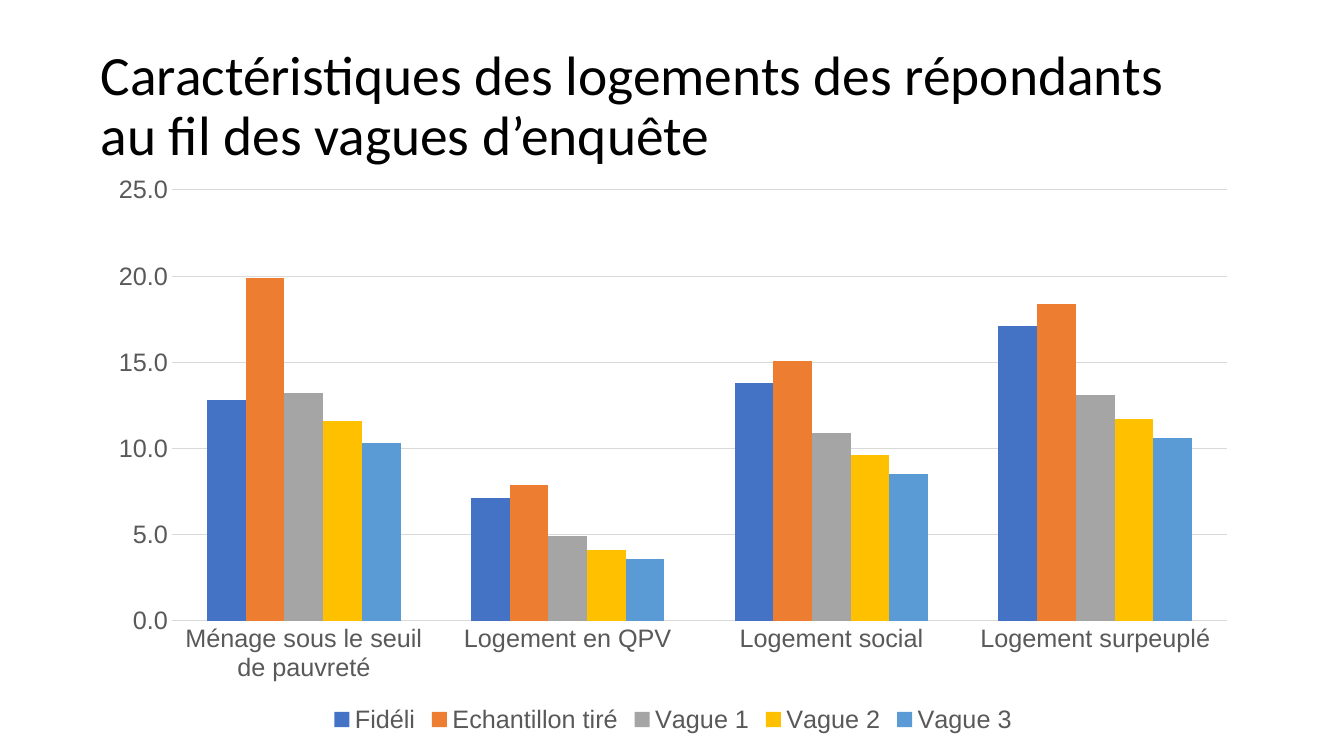
from pptx import Presentation
from pptx.chart.data import CategoryChartData
from pptx.dml.color import RGBColor
from pptx.enum import chart as charts, text
from pptx.util import Inches, Pt

TITLE_LINES = ["Caractéristiques des logements des répondants", "au fil des vagues d’enquête"]
CATEGORIES = ["Ménage sous le seuil de pauvreté", "Logement en QPV",
              "Logement social", "Logement surpeuplé"]
SERIES = [
    ("Fidéli", "4472C4", (12.8, 7.1, 13.8, 17.1)),
    ("Echantillon tiré", "ED7D31", (19.9, 7.9, 15.1, 18.4)),
    ("Vague 1", "A5A5A5", (13.2, 4.9, 10.9, 13.1)),
    ("Vague 2", "FFC000", (11.6, 4.1, 9.6, 11.7)),
    ("Vague 3", "5B9BD5", (10.3, 3.6, 8.5, 10.6)),
]
TITLE_BOX = (0.9, 0.26, 11.5, 1.61)
CHART_BOX = (0.95, 1.63, 11.45, 5.7)
TITLE_FONT = {"name": "Calibri", "size": Pt(39.6), "color": "000000"}
CHART_FONT = {"name": "Arial", "size": Pt(18), "color": "595959"}
GRID_COLOR = "D9D9D9"


def rgb(value):
    return RGBColor.from_string(value)


def set_all(target, values):
    for name, value in values.items():
        setattr(target, name, value)


def format_font(font, values):
    for name, value in values.items():
        if name == "color":
            font.color.rgb = rgb(value)
        else:
            setattr(font, name, value)


def format_line(line):
    line.color.rgb = rgb(GRID_COLOR)
    line.width = Pt(0.75)


def place(box):
    return dict(zip(("left", "top", "width", "height"), map(Inches, box)))


def add_title(slide):
    title = slide.shapes.title
    set_all(title, place(TITLE_BOX))
    set_all(title.text_frame, {
        "word_wrap": True, "auto_size": text.MSO_AUTO_SIZE.NONE,
        "vertical_anchor": text.MSO_ANCHOR.MIDDLE,
        "margin_left": Inches(0.1), "margin_right": Inches(0.1),
        "margin_top": Inches(0.05), "margin_bottom": Inches(0.05),
    })
    paragraph = title.text_frame.paragraphs[0]
    set_all(paragraph, {"alignment": text.PP_ALIGN.LEFT, "line_spacing": 0.9})
    for index, line in enumerate(TITLE_LINES):
        if index:
            paragraph.add_line_break()
        run = paragraph.add_run()
        run.text = line
        format_font(run.font, TITLE_FONT)


def add_housing_chart(slide):
    data = CategoryChartData(number_format="0.0")
    data.categories = CATEGORIES
    for name, _, values in SERIES:
        data.add_series(name, values)
    box = place(CHART_BOX)
    chart = slide.shapes.add_chart(
        charts.XL_CHART_TYPE.COLUMN_CLUSTERED,
        box["left"], box["top"], box["width"], box["height"], data).chart
    set_all(chart, {"has_title": False, "has_legend": True})
    set_all(chart.legend, {"position": charts.XL_LEGEND_POSITION.BOTTOM,
                           "include_in_layout": False})

    plot = chart.plots[0]
    set_all(plot, {"gap_width": 182, "overlap": 0, "vary_by_categories": False})
    for series, (_, color, _) in zip(plot.series, SERIES):
        series.format.fill.solid()
        series.format.fill.fore_color.rgb = rgb(color)

    category_axis, value_axis = chart.category_axis, chart.value_axis
    for axis in (category_axis, value_axis):
        set_all(axis, {"major_tick_mark": charts.XL_TICK_MARK.NONE,
                       "minor_tick_mark": charts.XL_TICK_MARK.NONE})
        format_font(axis.tick_labels.font, CHART_FONT)
    format_font(chart.legend.font, CHART_FONT)
    format_line(category_axis.format.line)
    set_all(value_axis, {"minimum_scale": 0, "maximum_scale": 25, "major_unit": 5,
                         "has_major_gridlines": True})
    format_line(value_axis.major_gridlines.format.line)
    value_axis.format.line.fill.background()
    set_all(value_axis.tick_labels, {"number_format": "0.0", "number_format_is_linked": False})


def main():
    presentation = Presentation()
    set_all(presentation, {"slide_width": Inches(13.33), "slide_height": Inches(7.5)})
    slide = presentation.slides.add_slide(presentation.slide_layouts[5])
    add_title(slide)
    add_housing_chart(slide)
    presentation.save("out.pptx")


if __name__ == "__main__":
    main()
